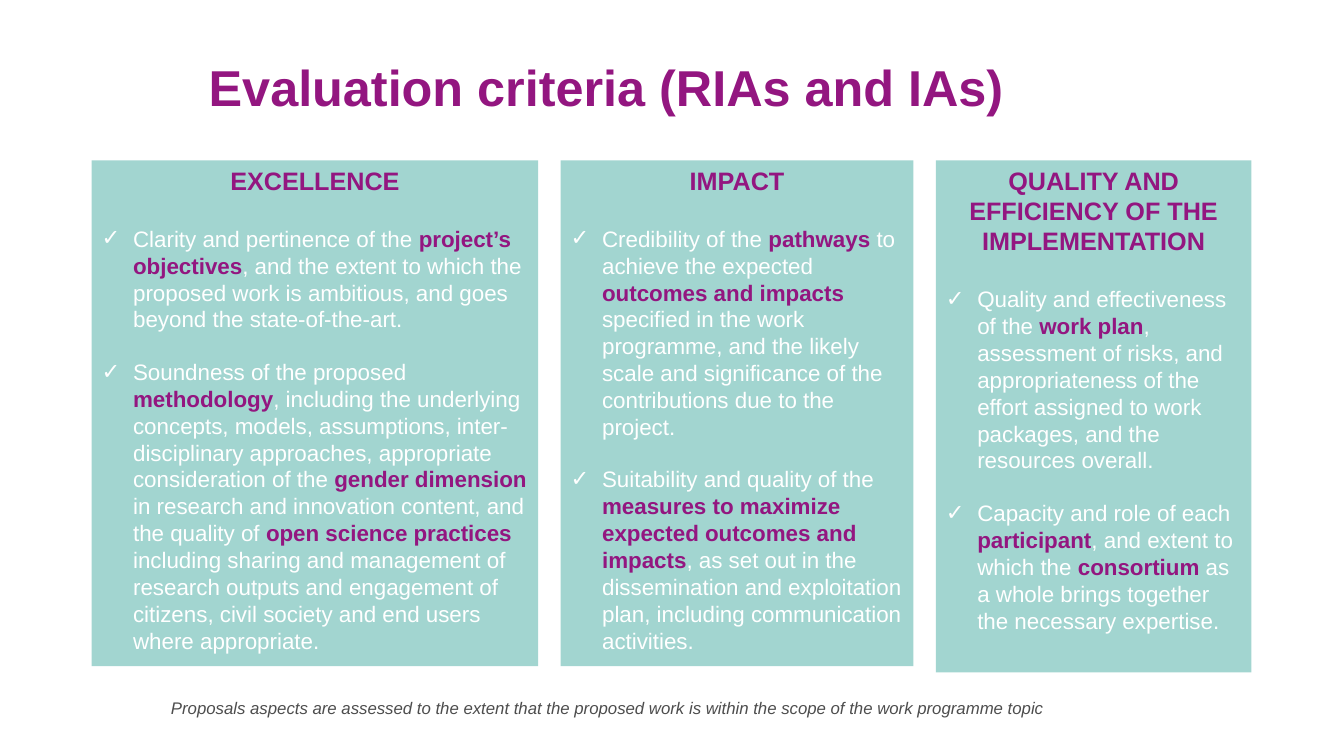
from pptx import Presentation
from pptx.dml.color import RGBColor
from pptx.enum.shapes import MSO_SHAPE as Shape
from pptx.enum.text import MSO_ANCHOR as Anchor, PP_ALIGN as Align
from pptx.oxml import parse_xml
from pptx.oxml.ns import nsdecls
from pptx.util import Pt

TITLE = "Evaluation criteria (RIAs and IAs)"
FOOTNOTE = ("Proposals aspects are assessed to the extent that the proposed work "
            "is within the scope of the work programme topic")

# Heading, width, height, bullets; text pieces alternate plain and highlighted.
CRITERIA = [
    ("EXCELLENCE", 319, 361.4, [
        ["Clarity and pertinence of the ", "project’s objectives",
         ", and the extent to which the proposed work is ambitious, and goes "
         "beyond the state-of-the-art."],
        ["Soundness of the proposed ", "methodology",
         ", including the underlying concepts, models, assumptions, "
         "inter-disciplinary approaches, appropriate consideration of the ",
         "gender dimension ",
         "in research and innovation content, and the quality of ",
         "open science practices ",
         "including sharing and management of research outputs and engagement "
         "of citizens, civil society and end users where appropriate."],
    ]),
    ("IMPACT", 252, 361.4, [
        ["Credibility of the ", "pathways", " to achieve the expected ",
         "outcomes and impacts ",
         "specified in the work programme, and the likely scale and "
         "significance of the contributions due to the project."],
        ["Suitability and quality of the ",
         "measures to maximize expected outcomes and impacts",
         ", as set out in the dissemination and exploitation plan, including "
         "communication activities."],
    ]),
    ("QUALITY AND EFFICIENCY OF THE IMPLEMENTATION", 225.4, 365.8, [
        ["Quality and effectiveness of the ", "work plan",
         ", assessment of risks, and appropriateness of the effort assigned to "
         "work packages, and the resources overall."],
        ["Capacity and role of each ", "participant",
         ", and extent to which the ", "consortium",
         " as a whole brings together the necessary expertise."],
    ]),
]

COLORS = {"accent": "931680", "panel": "A2D5D0", "plain": "FFFFFF", "note": "4D4D4D"}
LEFT, TOP, GAP = 65.5, 114.5, 16
INDENT = 22.5
HEADING_SPACE, BULLET_SPACE = 21, 18.4


def color(name):
    return RGBColor.from_string(COLORS[name])


def add_span(para, text, color_name, **formats):
    span = para.add_run()
    span.text = text
    span.font.name = "Arial"
    span.font.color.rgb = color(color_name)
    for name, value in formats.items():
        setattr(span.font, name, value)


def set_check_bullet(para):
    """Give the paragraph a hanging check mark."""
    properties = para._p.get_or_add_pPr()
    properties.set("marL", str(Pt(INDENT)))
    properties.set("indent", str(-Pt(INDENT)))
    properties.append(parse_xml(f'<a:buFont {nsdecls("a")} typeface="Arial"/>'))
    properties.append(parse_xml(f'<a:buChar {nsdecls("a")} char="✓"/>'))


def add_text_box(page, bounds, text, color_name, **formats):
    frame = page.shapes.add_textbox(*map(Pt, bounds)).text_frame
    frame.word_wrap = True
    add_span(frame.paragraphs[0], text, color_name, **formats)


def add_panel(page, left, width, height, heading, bullets):
    box = page.shapes.add_shape(Shape.RECTANGLE, Pt(left), Pt(TOP), Pt(width), Pt(height))
    box.shadow.inherit = False
    box.fill.solid()
    box.fill.fore_color.rgb = color("panel")
    box.line.fill.background()
    frame = box.text_frame
    frame.word_wrap = True
    frame.vertical_anchor = Anchor.TOP
    title = frame.paragraphs[0]
    title.alignment = Align.CENTER
    add_span(title, heading, "accent", size=Pt(18), bold=True)
    for number, pieces in enumerate(bullets):
        para = frame.add_paragraph()
        para.alignment = Align.LEFT
        para.space_before = Pt(BULLET_SPACE if number else HEADING_SPACE)
        set_check_bullet(para)
        for position, piece in enumerate(pieces):
            strong = position % 2 == 1
            add_span(para, piece, "accent" if strong else "plain",
                     size=Pt(16), bold=strong)


def main():
    deck = Presentation()
    deck.slide_width, deck.slide_height = Pt(960), Pt(540)
    page = deck.slides.add_slide(deck.slide_layouts[6])
    add_text_box(page, (142, 36.7, 759, 37.4), TITLE, "accent", size=Pt(36), bold=True)
    left = LEFT
    for heading, width, height, bullets in CRITERIA:
        add_panel(page, left, width, height, heading, bullets)
        left += width + GAP
    add_text_box(page, (115, 494.6, 641.5, 21.8), FOOTNOTE, "note", size=Pt(12), italic=True)
    deck.save("out.pptx")


if __name__ == "__main__":
    main()
